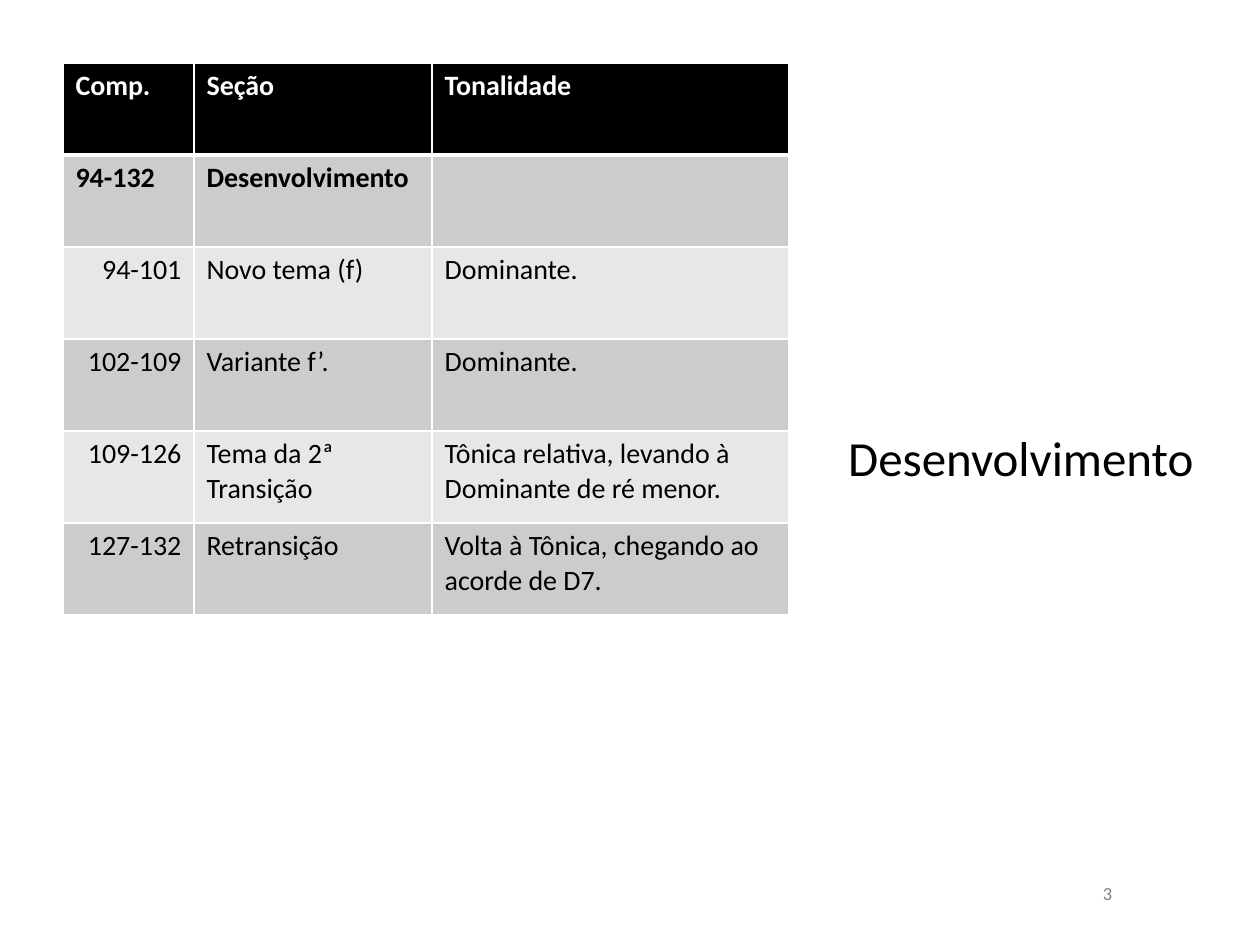
from lxml.etree import SubElement
from pptx import Presentation
from pptx.dml.color import RGBColor
from pptx.enum.text import MSO_ANCHOR as Anchor, PP_ALIGN as Align
from pptx.oxml.ns import qn
from pptx.util import Inches, Pt

BLACK = RGBColor(0x00, 0x00, 0x00)
WHITE = RGBColor(0xFF, 0xFF, 0xFF)
GRAY = RGBColor(0x80, 0x80, 0x80)
DARK_BAND = RGBColor(0xCC, 0xCC, 0xCC)
LIGHT_BAND = RGBColor(0xE7, 0xE7, 0xE7)

COLUMN_WIDTHS = (1.04, 1.89, 2.83)
ROW_HEIGHT = 0.73
SECTIONS = (
    ("Comp.", "Seção", "Tonalidade"),
    ("94-132", "Desenvolvimento", ""),
    ("94-101", "Novo tema (f)", "Dominante."),
    ("102-109", "Variante f’.", "Dominante."),
    ("109-126", "Tema da 2ª Transição", "Tônica relativa, levando à Dominante de ré menor."),
    ("127-132", "Retransição", "Volta à Tônica, chegando ao acorde de D7."),
)


def style_paragraph(paragraph, size, color, align, bold=False):
    """Set the font and alignment of a paragraph."""
    paragraph.alignment = align
    font = paragraph.font
    font.name, font.size, font.bold = "Calibri", Pt(size), bold
    font.color.rgb = color


def add_borders(cell, top, bottom):
    """Draw white borders, with the given top and bottom widths in points."""
    properties = cell._tc.get_or_add_tcPr()
    for side, width in (("L", 1), ("R", 1), ("T", top), ("B", bottom)):
        line = SubElement(properties, qn(f"a:ln{side}"), w=str(Pt(width)))
        fill = SubElement(line, qn("a:solidFill"))
        SubElement(fill, qn("a:srgbClr"), val=str(WHITE))


def add_section_table(slide):
    """Add the table of bars, sections and keys."""
    table = slide.shapes.add_table(
        len(SECTIONS), len(COLUMN_WIDTHS), Inches(0.5), Inches(0.5),
        Inches(sum(COLUMN_WIDTHS)), Inches(ROW_HEIGHT * len(SECTIONS)),
    ).table
    for column, width in zip(table.columns, COLUMN_WIDTHS):
        column.width = Inches(width)
    for row, texts in enumerate(SECTIONS):
        table.rows[row].height = Inches(ROW_HEIGHT)
        band = BLACK if row == 0 else DARK_BAND if row % 2 else LIGHT_BAND
        for col, text in enumerate(texts):
            cell = table.cell(row, col)
            cell.text = text
            add_borders(cell, 3 if row == 1 else 1, 3 if row == 0 else 1)
            cell.fill.solid()
            cell.fill.fore_color.rgb = band
            style_paragraph(
                cell.text_frame.paragraphs[0], 16,
                WHITE if row == 0 else BLACK,
                Align.RIGHT if row > 1 and col == 0 else Align.LEFT,
                bold=row < 2,
            )


def add_label(slide, text, left, top, width, height, size, color, align, inset):
    """Add a vertically centred line of text."""
    frame = slide.shapes.add_textbox(
        Inches(left), Inches(top), Inches(width), Inches(height)
    ).text_frame
    frame.word_wrap = True
    frame.vertical_anchor = Anchor.MIDDLE
    frame.margin_left = frame.margin_right = Inches(inset)
    frame.margin_top = frame.margin_bottom = Inches(0)
    frame.text = text
    style_paragraph(frame.paragraphs[0], size, color, align)


def main():
    """Build and save the slide."""
    deck = Presentation()
    deck.slide_width, deck.slide_height = Inches(10), Inches(7.5)
    slide = deck.slides.add_slide(deck.slide_layouts[6])
    add_section_table(slide)
    add_label(slide, "Desenvolvimento", 6.5, 0.5, 3.07, 6.25, 28, BLACK, Align.RIGHT, 0.1)
    add_label(slide, "3", 8.5, 7, 0.58, 0.17, 10.5, GRAY, Align.CENTER, 0)
    deck.save("out.pptx")


if __name__ == "__main__":
    main()
